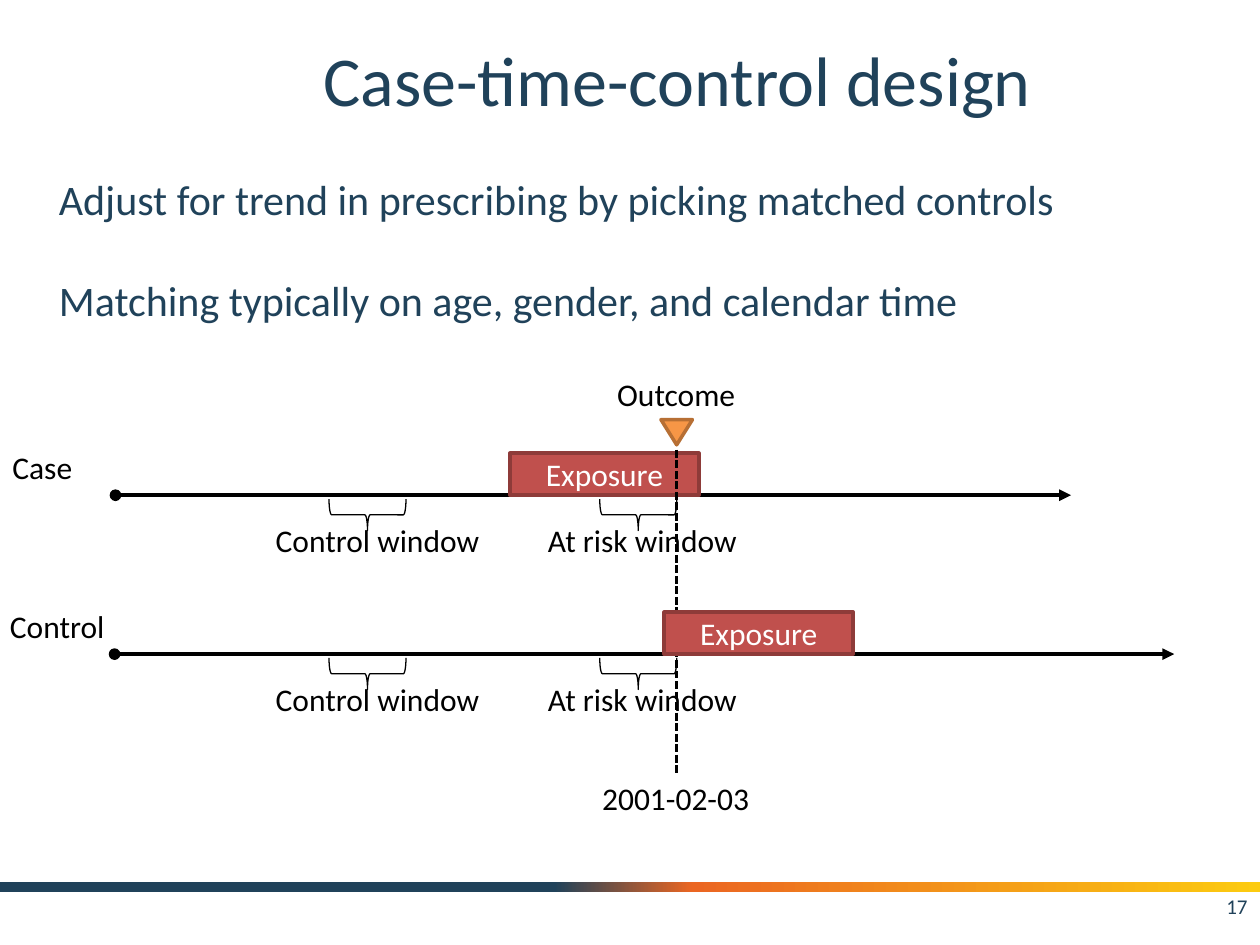
from copy import deepcopy

from pptx import Presentation
from pptx.dml.color import RGBColor
from pptx.enum.dml import MSO_LINE_DASH_STYLE as Dash
from pptx.enum.shapes import MSO_CONNECTOR, MSO_SHAPE as Shape
from pptx.enum.text import MSO_ANCHOR as Anchor, MSO_AUTO_SIZE as AutoSize, PP_ALIGN as Align
from pptx.oxml.ns import qn
from pptx.util import Pt
from lxml.etree import SubElement

NAVY = RGBColor(0x20, 0x42, 0x5A)
ORANGE = RGBColor(0xEB, 0x66, 0x22)
YELLOW = RGBColor(0xFC, 0xCB, 0x10)
RED = RGBColor(0xC0, 0x50, 0x4D)
DARK_RED = RGBColor(0x8E, 0x3B, 0x39)
AMBER = RGBColor(0xF7, 0x96, 0x46)
BROWN = RGBColor(0xB7, 0x6F, 0x34)
BLACK = RGBColor(0, 0, 0)
WHITE = RGBColor(0xFF, 0xFF, 0xFF)

CASE_AXIS = 283
ROW_GAP = 90.8
OUTCOME_X = 386.7
WINDOWS = [("At risk window", 306, 124, 364.7), ("Control window", 150.5, 132.5, 210)]


class SlideBuilder:
    font = "Calibri"

    def __init__(self, slide):
        self.slide = slide

    def style(self, text_frame, size, color, align=Align.LEFT):
        for paragraph in text_frame.paragraphs:
            paragraph.alignment = align
            for run in paragraph.runs:
                run.font.name = self.font
                run.font.size = Pt(size)
                run.font.color.rgb = color

    def place(self, shape, left, top, width, height):
        shape.left, shape.top = Pt(left), Pt(top)
        shape.width, shape.height = Pt(width), Pt(height)

    def title(self, text, *box):
        title = self.slide.shapes.title
        self.place(title, *box)
        title.text_frame.text = text
        title.text_frame.vertical_anchor = Anchor.MIDDLE
        self.style(title.text_frame, 40, NAVY, Align.CENTER)

    def text(self, text, left, top, width, height=29, size=18, color=BLACK,
             align=Align.LEFT, wrap=False, anchor=Anchor.TOP, gap=0):
        box = self.slide.shapes.add_textbox(Pt(left), Pt(top), Pt(width), Pt(height))
        frame = box.text_frame
        frame.text = text
        frame.word_wrap = wrap
        frame.auto_size = AutoSize.NONE if wrap else AutoSize.SHAPE_TO_FIT_TEXT
        frame.vertical_anchor = anchor
        for paragraph in frame.paragraphs[1:]:
            paragraph.space_before = Pt(gap)
        self.style(frame, size, color, align)
        return box

    def shape(self, kind, left, top, width, height, fill=None, line=None, weight=2, text=""):
        shape = self.slide.shapes.add_shape(kind, Pt(left), Pt(top), Pt(width), Pt(height))
        shape.shadow.inherit = False
        if fill is None:
            shape.fill.background()
        else:
            shape.fill.solid()
            shape.fill.fore_color.rgb = fill
        if line is None:
            shape.line.fill.background()
        else:
            shape.line.color.rgb = line
            shape.line.width = Pt(weight)
        if text:
            shape.text_frame.text = text
            shape.text_frame.vertical_anchor = Anchor.MIDDLE
            self.style(shape.text_frame, 18, WHITE, Align.CENTER)
        return shape

    def gradient_bar(self, stops, *box):
        bar = self.shape(Shape.RECTANGLE, *box)
        bar.fill.gradient()
        bar.fill.gradient_angle = 0
        stop_list = next(bar._element.spPr.iter(qn("a:gsLst")))
        stop_list.append(deepcopy(stop_list[-1]))
        for stop, (position, color) in zip(bar.fill.gradient_stops, stops):
            stop.color.rgb = color
            stop.position = position

    def line(self, x1, y1, x2, y2, weight):
        line = self.slide.shapes.add_connector(
            MSO_CONNECTOR.STRAIGHT, Pt(x1), Pt(y1), Pt(x2), Pt(y2))
        line.line.color.rgb = BLACK
        line.line.width = Pt(weight)
        SubElement(line._element.spPr, qn("a:effectLst"))
        return line

    def axis(self, start, end, y):
        outline = self.line(start, y, end, y, 2.25).line._get_or_add_ln()
        SubElement(outline, qn("a:headEnd"), type="oval")
        SubElement(outline, qn("a:tailEnd"), type="triangle")

    def brace(self, center_x, center_y, width=44, depth=18):
        brace = self.shape(Shape.RIGHT_BRACE, center_x - depth / 2, center_y - width / 2,
                           depth, width, line=BLACK, weight=0.75)
        brace.rotation = 90

    def timeline(self, name, name_left, name_width, start, end, y, exposure_left):
        self.axis(start, end, y)
        self.shape(Shape.RECTANGLE, exposure_left, y - 24, 108, 24, RED, DARK_RED,
                   text="Exposure")
        self.text(name, name_left, y - 30.5, name_width)
        for label, left, width, center in WINDOWS:
            self.brace(center, y + 11.2)
            self.text(label, left, y + 11, width)


def main():
    presentation = Presentation()
    presentation.slide_width, presentation.slide_height = Pt(720), Pt(540)
    builder = SlideBuilder(presentation.slides.add_slide(presentation.slide_layouts[5]))

    builder.gradient_bar([(0.44, NAVY), (0.55, ORANGE), (1, YELLOW)], 0, 504, 720, 5.8)
    builder.title("Case-time-control design", 90, 12, 594, 66)
    builder.text("17", 552, 503.5, 168, size=12, color=NAVY, align=Align.RIGHT,
                 wrap=True, anchor=Anchor.MIDDLE)
    builder.text("Adjust for trend in prescribing by picking matched controls\n"
                 "Matching typically on age, gender, and calendar time",
                 26.6, 95.8, 684, 94.3, size=24, color=NAVY, wrap=True, gap=28.8)

    builder.timeline("Case", 0, 49, 66, 612, CASE_AXIS, 291.4)
    builder.text("Outcome", 345.6, 210.5, 83)
    builder.shape(Shape.FLOWCHART_MERGE, OUTCOME_X - 9, 239.8, 18, 14.4, AMBER, BROWN)
    date = builder.text("2001-02-03", OUTCOME_X - 49.7, 441.5, 99.4)
    outcome_line = builder.line(OUTCOME_X, 257, OUTCOME_X, 441.5, 1.5)
    outcome_line.line.dash_style = Dash.SQUARE_DOT
    outcome_line.end_connect(date, 0)
    builder.timeline("Control", -1.4, 69, 65.5, 671, CASE_AXIS + ROW_GAP, 379.6)

    presentation.save("out.pptx")


if __name__ == "__main__":
    main()
